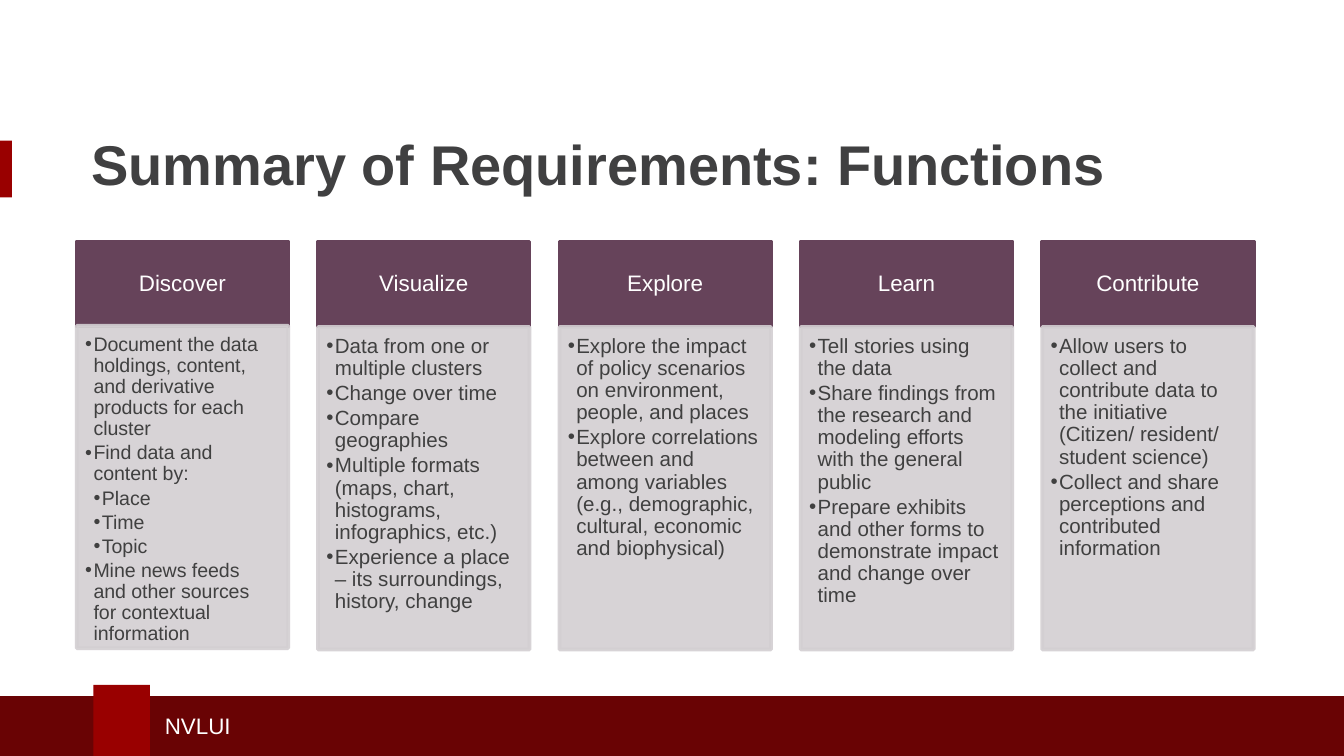
from dataclasses import dataclass

from lxml import etree
from pptx import Presentation
from pptx import util as u
from pptx.dml.color import RGBColor
from pptx.enum import shapes, text
from pptx.oxml import ns

Pt = u.Pt


@dataclass(frozen=True)
class Theme:
    font: str = "Arial"
    red: str = "990000"
    dark_red: str = "690304"
    plum: str = "66435A"
    mist: str = "D3CFD2"
    white: str = "FFFFFF"
    title_ink: str = "404041"
    body_ink: str = "404040"
    title_size: float = 30
    label_size: float = 12
    body_size: float = 11
    tight_size: float = 10.5


T = Theme()

# Column geometry, in points
COLUMN_LEFT, COLUMN_STEP, COLUMN_WIDTH = 41.1, 129.3, 113.3
HEAD_TOP, HEAD_HEIGHT = 129.4, 45.5
BODY_TOP, TIGHT_TOP, BODY_HEIGHT = 175.2, 174.5, 172.8
INDENT = 4.5

# Heading, type size, body top, list items as (level, words)
COLUMNS = [
    ("Discover", T.tight_size, TIGHT_TOP, [
        (1, "Document the data holdings, content, and derivative products for each cluster"),
        (1, "Find data and content by:"),
        (2, "Place"),
        (2, "Time"),
        (2, "Topic"),
        (1, "Mine news feeds and other sources for contextual information"),
    ]),
    ("Visualize", T.body_size, BODY_TOP, [
        (1, "Data from one or multiple clusters"),
        (1, "Change over time"),
        (1, "Compare geographies"),
        (1, "Multiple formats (maps, chart, histograms, infographics, etc.)"),
        (1, "Experience a place – its surroundings, history, change"),
    ]),
    ("Explore", T.body_size, BODY_TOP, [
        (1, "Explore the impact of policy scenarios on environment, people, and places"),
        (1, "Explore correlations between and among variables "
            "(e.g., demographic, cultural, economic and biophysical)"),
    ]),
    ("Learn", T.body_size, BODY_TOP, [
        (1, "Tell stories using the data"),
        (1, "Share findings from the research and modeling efforts with the general public"),
        (1, "Prepare exhibits and other forms to demonstrate impact and change over time"),
    ]),
    ("Contribute", T.body_size, BODY_TOP, [
        (1, "Allow users to collect and contribute data to the initiative "
            "(Citizen/ resident/ student science)"),
        (1, "Collect and share perceptions and contributed information"),
    ]),
]


def set_alpha(fill_owner, percent):
    color = fill_owner.find(".//" + ns.qn("a:srgbClr"))
    etree.SubElement(color, ns.qn("a:alpha"), val=str(percent * 1000))


def add_rect(s, box, color, outlined=False, alpha=None):
    sp = s.shapes.add_shape(shapes.MSO_SHAPE.RECTANGLE, *map(Pt, box))
    sp.shadow.inherit = False
    sp.fill.solid()
    sp.fill.fore_color.rgb = RGBColor.from_string(color)
    if outlined:
        sp.line.color.rgb = RGBColor.from_string(color)
        sp.line.width = Pt(2)
    else:
        sp.line.fill.background()
    if alpha:
        props = sp.fill._xPr
        set_alpha(props.find(ns.qn("a:solidFill")), alpha)
        set_alpha(props.find(ns.qn("a:ln")), alpha)
    return sp


def set_frame(tf, insets, anchor):
    tf.word_wrap = True
    tf.vertical_anchor = anchor
    tf.margin_left, tf.margin_top, tf.margin_right, tf.margin_bottom = map(Pt, insets)


def add_run(p, words, size, color, bold=False):
    r = p.add_run()
    r.text = words
    r.font.name = T.font
    r.font.size = Pt(size)
    r.font.bold = bold
    r.font.color.rgb = RGBColor.from_string(color)


def add_label(s, box, words, size, color, bold=False):
    tf = s.shapes.add_textbox(*map(Pt, box)).text_frame
    set_frame(tf, (7.2, 3.6, 7.2, 3.6), text.MSO_ANCHOR.MIDDLE)
    add_run(tf.paragraphs[0], words, size, color, bold)


def add_bullet(p, level):
    p.level = level
    props = p._p.get_or_add_pPr()
    props.set("marL", str(Pt(INDENT * level)))
    props.set("indent", str(-Pt(INDENT)))
    etree.SubElement(props, ns.qn("a:buFont"), typeface=T.font)
    etree.SubElement(props, ns.qn("a:buChar"), char="•")


def add_column(s, left, heading, size, body_top, items):
    # Heading block
    head = add_rect(s, (left, HEAD_TOP, COLUMN_WIDTH, HEAD_HEIGHT), T.plum, outlined=True)
    set_frame(head.text_frame, (6.5, 3.6, 6.5, 3.6), text.MSO_ANCHOR.MIDDLE)
    p = head.text_frame.paragraphs[0]
    p.alignment = text.PP_ALIGN.CENTER
    p.line_spacing = 0.9
    add_run(p, heading, T.label_size, T.white)

    # Bulleted body
    body = add_rect(s, (left, body_top, COLUMN_WIDTH, BODY_HEIGHT), T.mist,
                    outlined=True, alpha=90)
    tf = body.text_frame
    set_frame(tf, (4.5, 4.5, 6.4, 6.75), text.MSO_ANCHOR.TOP)
    for i, (level, words) in enumerate(items):
        p = tf.add_paragraph() if i else tf.paragraphs[0]
        p.alignment = text.PP_ALIGN.LEFT
        p.line_spacing = 0.9
        p.space_after = Pt(1.6)
        add_bullet(p, level)
        add_run(p, words, size, T.body_ink)


def main():
    prs = Presentation()
    prs.slide_width, prs.slide_height = Pt(720), Pt(405)
    s = prs.slides.add_slide(prs.slide_layouts[6])

    # Accent and footer
    add_rect(s, (0, 75.4, 6.4, 30.4), T.red)
    add_rect(s, (-2, 373, 726.5, 36), T.dark_red)
    add_rect(s, (50, 367, 30.4, 42), T.red)
    add_label(s, (81.2, 378, 284.4, 21.6), "NVLUI", T.label_size, T.white)

    # Title
    add_label(s, (41.8, 60, 630, 54.7), "Summary of Requirements: Functions",
              T.title_size, T.title_ink, bold=True)

    # Columns
    for i, column in enumerate(COLUMNS):
        add_column(s, COLUMN_LEFT + i * COLUMN_STEP, *column)

    prs.save("out.pptx")


if __name__ == "__main__":
    main()
